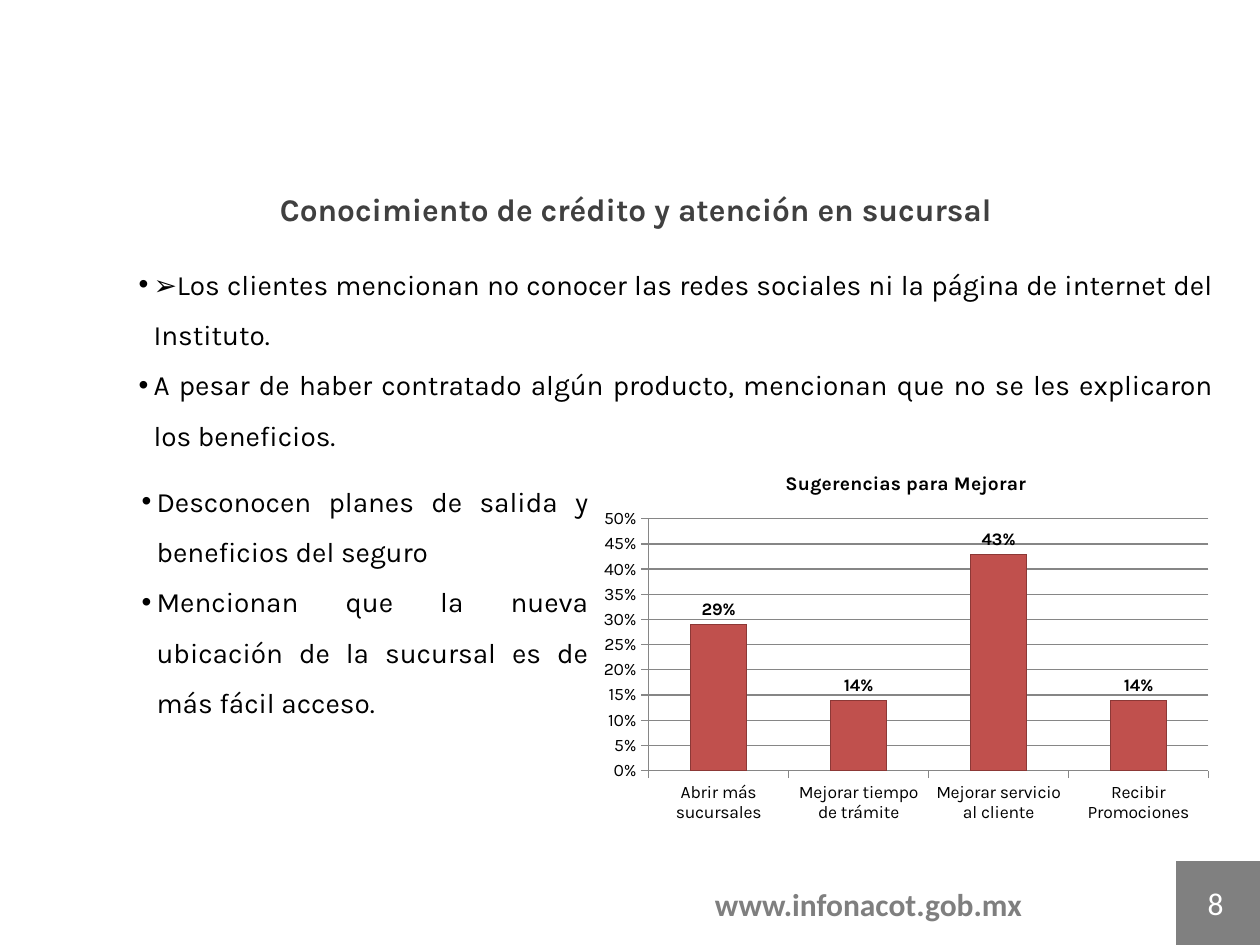
from lxml import etree
from pptx import Presentation
from pptx.chart.data import CategoryChartData
from pptx.dml.color import RGBColor
from pptx.enum import chart as ch, shapes, text
from pptx.oxml.ns import qn
from pptx.util import Pt

PX = 914400 / 126  # EMU in one px
COLORS = {"ink": "000000", "title": "404040", "footer": "7F7F7F", "block": "808080",
          "white": "FFFFFF", "bar": "C0504D", "bar_edge": "8C3836", "axis": "868686"}

TOP_POINTS = [
    "➢Los clientes mencionan no conocer las redes sociales ni la página de internet del Instituto.",
    "A pesar de haber contratado algún producto, mencionan que no se les explicaron los beneficios.",
]
SIDE_POINTS = [
    "Desconocen planes de salida y beneficios del seguro",
    "Mencionan que la nueva ubicación de la sucursal es de más fácil acceso.",
]
SUGGESTIONS = {"Abrir más sucursales": 0.29, "Mejorar tiempo de trámite": 0.14,
               "Mejorar servicio al cliente": 0.43, "Recibir Promociones": 0.14}


def px(n):
    return round(n * PX)


def rgb(name):
    return RGBColor.from_string(COLORS[name])


def place(sp, box):
    sp.left, sp.top, sp.width, sp.height = map(px, box)


def style(font, size, color="ink", bold=False, name="Karla"):
    font.name, font.size, font.bold = name, Pt(size), bold
    font.color.rgb = rgb(color)


def set_line(sp, content, size, color, bold=False, name="Karla"):
    """Fill a shape with one centred line."""
    tf = sp.text_frame
    tf.text = content
    tf.word_wrap = True
    tf.auto_size = text.MSO_AUTO_SIZE.NONE
    tf.vertical_anchor = text.MSO_ANCHOR.MIDDLE
    p = tf.paragraphs[0]
    p.alignment = text.PP_ALIGN.CENTER
    style(p.runs[0].font, size, color, bold, name)


def add_title(s, box):
    place(s.shapes.title, box)
    set_line(s.shapes.title, "Conocimiento de crédito y atención en sucursal", 18, "title", True)


def add_list(sp, box, points):
    place(sp, box)
    tf = sp.text_frame
    tf.text = "\n".join(points)
    tf.word_wrap = True
    tf.auto_size = text.MSO_AUTO_SIZE.NONE
    tf.vertical_anchor = text.MSO_ANCHOR.TOP
    for p in tf.paragraphs:
        p.alignment = text.PP_ALIGN.JUSTIFY
        p.line_spacing = 1.5
        p.space_before = p.space_after = Pt(0)
        pPr = p._p.get_or_add_pPr()
        pPr.set("marL", str(px(39)))
        pPr.set("indent", str(px(-15)))
        etree.SubElement(pPr, qn("a:buFont")).set("typeface", "Arial")
        etree.SubElement(pPr, qn("a:buChar")).set("char", "•")
        style(p.runs[0].font, 16)


def add_suggestions(s, box):
    name = "Sugerencias para Mejorar"
    data = CategoryChartData(number_format="0%")
    data.categories = list(SUGGESTIONS)
    data.add_series(name, list(SUGGESTIONS.values()))
    chart = s.shapes.add_chart(ch.XL_CHART_TYPE.COLUMN_CLUSTERED, *map(px, box), data).chart
    style(chart.font, 10)
    chart.has_legend = False
    chart.has_title = True
    chart.chart_title.text_frame.text = name
    chart.chart_title.include_in_layout = False
    style(chart.chart_title.text_frame.paragraphs[0].runs[0].font, 11, bold=True)

    # Axes
    value = chart.value_axis
    value.minimum_scale, value.maximum_scale, value.major_unit = 0, 0.5, 0.05
    value.tick_labels.number_format = "0%"
    value.tick_labels.number_format_is_linked = False
    value.has_major_gridlines = True
    for axis in (value, chart.category_axis):
        axis.major_tick_mark = ch.XL_TICK_MARK.OUTSIDE
        axis.format.line.color.rgb = rgb("axis")
    value.major_gridlines.format.line.color.rgb = rgb("axis")

    # Bars and their labels
    plot = chart.plots[0]
    plot.gap_width = 150
    plot.vary_by_categories = False
    bars = plot.series[0].format
    bars.fill.solid()
    bars.fill.fore_color.rgb = rgb("bar")
    bars.line.color.rgb = rgb("bar_edge")
    plot.has_data_labels = True
    labels = plot.data_labels
    labels.show_value = True
    labels.number_format = "0%"
    labels.number_format_is_linked = False
    labels.position = ch.XL_LABEL_POSITION.OUTSIDE_END
    style(labels.font, 10, bold=True)


def add_footer(s, box):
    x, y, w, h = box
    block_w = 84
    address_w = w - block_w
    address = s.shapes.add_textbox(*map(px, (x, y + 18, address_w, 50)))
    set_line(address, "www.infonacot.gob.mx", 18, "footer", True, "Calibri")

    # Page number block
    block = s.shapes.add_shape(shapes.MSO_SHAPE.RECTANGLE,
                               *map(px, (x + address_w, y, block_w, h)))
    block.shadow.inherit = False
    block.fill.solid()
    block.fill.fore_color.rgb = rgb("block")
    block.line.fill.background()
    number = s.shapes.add_textbox(*map(px, (x + address_w, y, 79, h)))
    set_line(number, "8", 18, "white", name="Calibri")


def main():
    prs = Presentation()
    prs.slide_width, prs.slide_height = px(1260), px(945)
    s = prs.slides.add_slide(prs.slide_layouts.get_by_name("Two Content"))
    top, side = list(s.placeholders)[1:3]
    add_footer(s, (561, 861, 699, 84))
    add_title(s, (229, 184, 814, 50))
    add_list(top, (102, 244, 1124, 217), TOP_POINTS)
    add_list(side, (105, 461, 496, 267), SIDE_POINTS)
    add_suggestions(s, (591, 452, 630, 378))
    prs.save("out.pptx")


if __name__ == "__main__":
    main()
